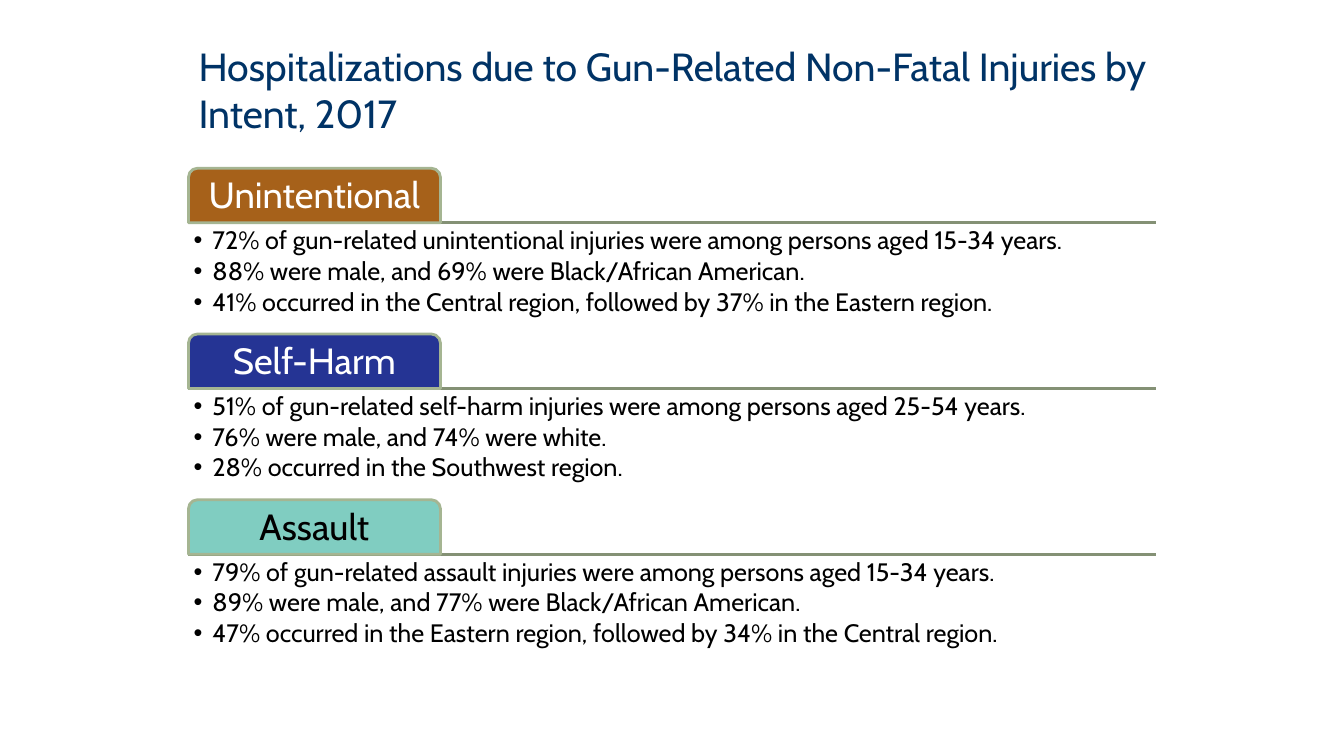
from pptx import Presentation
from pptx.dml.color import RGBColor
from pptx.enum.shapes import MSO_CONNECTOR as Link, MSO_SHAPE as Kind
from pptx.enum.text import MSO_ANCHOR as Anchor, MSO_AUTO_SIZE as Fit, PP_ALIGN as Align
from pptx.oxml.ns import qn
from pptx.util import Pt
from lxml.etree import SubElement as Sub

LEFT, WIDTH = 134.64, 691.2
TOP, STEP = 120.2, 118.4
TAB_W, TAB_H, LIST_H = 180, 38.9, 77.8
PARTS = [
    ("Unintentional", "A6611A", "FFFFFF", 1, [
        "72% of gun-related unintentional injuries were among persons aged 15-34 years.",
        "88% were male, and 69% were Black/African American.",
        "41% occurred in the Central region, followed by 37% in the Eastern region."]),
    ("Self-Harm", "253494", "FFFFFF", 2, [
        "51% of gun-related self-harm injuries were among persons aged 25-54 years.",
        "76% were male, and 74% were white.",
        "28% occurred in the Southwest region."]),
    ("Assault", "80CDC1", "000000", 4, [
        "79% of gun-related assault injuries were among persons aged 15-34 years.",
        "89% were male, and 77% were Black/African American.",
        "47% occurred in the Eastern region, followed by 34% in the Central region."]),
]


def put(item, **vals):
    for key, val in vals.items():
        setattr(item, key, val)


def tint(color, code):
    color.rgb = RGBColor.from_string(code)


def place(shape, x, y, w, h):
    put(shape, left=Pt(x), top=Pt(y), width=Pt(w), height=Pt(h))


def frame(shape, anchor, pad):
    text = shape.text_frame
    put(text, word_wrap=True, auto_size=Fit.NONE, vertical_anchor=anchor)
    for side in ("left", "top", "right", "bottom"):
        setattr(text, "margin_" + side, Pt(pad))
    return text


def style(para, size, code, **vals):
    put(para, space_before=Pt(0), **vals)
    put(para.font, name="Cabin", size=Pt(size), bold=False)
    tint(para.font.color, code)


def add_title(slide, x, y, w, h):
    shape = slide.shapes.title
    place(shape, x, y, w, h)
    text = frame(shape, Anchor.MIDDLE, 7.2)
    text.text = "Hospitalizations due to Gun-Related Non-Fatal Injuries by Intent, 2017"
    style(text.paragraphs[0], 28, "003366", alignment=Align.LEFT)


def add_rule(slide, x, y, w):
    rule = slide.shapes.add_connector(Link.STRAIGHT, Pt(x), Pt(y), Pt(x + w), Pt(y))
    tint(rule.line.color, "849175")
    rule.line.width = Pt(2)
    Sub(rule._element.spPr, qn("a:effectLst"))


def add_tab(slide, x, y, w, h, label, fill, ink):
    tab = slide.shapes.add_shape(Kind.ROUND_2_SAME_RECTANGLE, Pt(x), Pt(y), Pt(w), Pt(h))
    tab.shadow.inherit = False
    tab.fill.solid()
    tint(tab.fill.fore_color, fill)
    tint(tab.line.color, "A5B592")
    tab.line.width = Pt(2)
    text = frame(tab, Anchor.MIDDLE, 3.6)
    text.text = label
    style(text.paragraphs[0], 26, ink, alignment=Align.CENTER, line_spacing=0.9)


def add_list(slide, x, y, w, h, slot, facts):
    body = slide.placeholders[slot]
    place(body, x, y, w, h)
    text = frame(body, Anchor.TOP, 3.6)
    text.text = "\n".join(facts)
    for para in text.paragraphs:
        props = para._p.get_or_add_pPr()
        props.set("marL", str(Pt(13.5)))
        props.set("indent", str(Pt(-13.5)))
        Sub(props, qn("a:buFont"), typeface="Arial")
        Sub(props, qn("a:buChar"), char="•")
        style(para, 18, "000000", line_spacing=0.9, space_after=Pt(2.5))


def add_part(slide, x, y, w, label, fill, ink, slot, facts):
    base = y + TAB_H
    add_rule(slide, x, base, w)
    add_tab(slide, x, y, TAB_W, TAB_H, label, fill, ink)
    add_list(slide, x, base, w, LIST_H, slot, facts)


def main():
    deck = Presentation()
    put(deck, slide_width=Pt(960), slide_height=Pt(540))
    slide = deck.slides.add_slide(deck.slide_layouts.get_by_name("Comparison"))
    add_title(slide, LEFT, 30.2, WIDTH, 67.7)
    for row, part in enumerate(PARTS):
        add_part(slide, LEFT, TOP + row * STEP, WIDTH, *part)
    spare = slide.placeholders[3]._element
    spare.getparent().remove(spare)
    deck.save("out.pptx")


if __name__ == "__main__":
    main()
